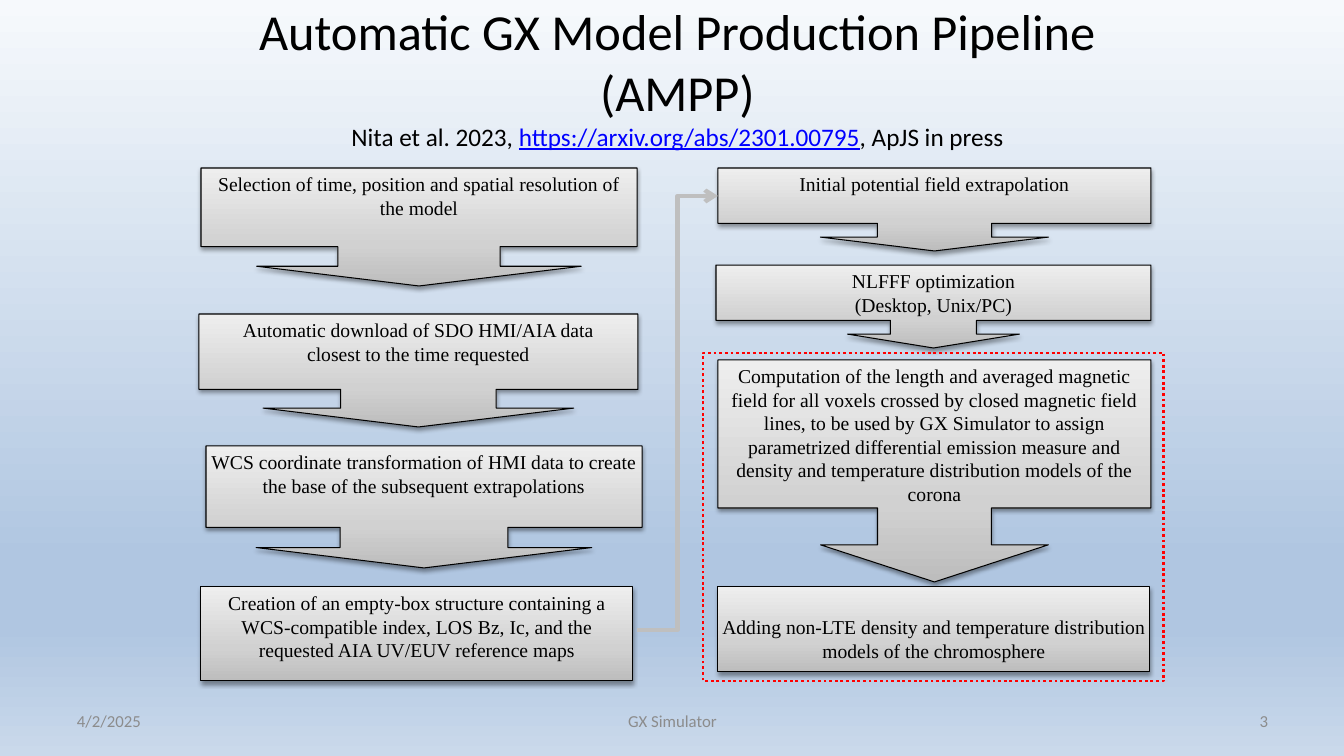
import pptx
import pptx.util
import pptx.dml.color
import pptx.enum.dml
import pptx.enum.shapes
import pptx.enum.text
import pptx.oxml.ns
from dataclasses import dataclass
from lxml import etree

qn = pptx.oxml.ns.qn
Align = pptx.enum.text.PP_ALIGN
Anchor = pptx.enum.text.MSO_ANCHOR
Shape = pptx.enum.shapes.MSO_SHAPE


@dataclass(frozen=True)
class Theme:
    heading_font: str = "Calibri"
    step_font: str = "Times New Roman"
    title_size: int = 36
    citation_size: int = 18
    step_size: int = 14
    footer_size: int = 12
    ink: str = "000000"
    link: str = "0000FF"
    muted: str = "8C8C8C"
    flow: str = "BFBFBF"
    highlight: str = "FF0000"
    sky: tuple = ((0, "F6F9FC"), (74, "B0C6E1"), (83, "B0C6E1"), (100, "CAD9EB"))
    steel: tuple = ((0, "BDBDBD"), (35, "D1D1D1"), (100, "EEEEEE"))


class PipelineSlide:
    """Draws the pipeline slide's elements in one theme, with lengths in px."""

    def __init__(self, deck, theme):
        self.theme = theme
        self.slide = deck.slides.add_slide(deck.slide_layouts[5])
        self.gradient(self.slide.background.fill, self.slide.element, theme.sky, 270)

    @staticmethod
    def px(*lengths):
        return [pptx.util.Emu(round(length * 914400 / 100.8)) for length in lengths]

    @staticmethod
    def rgb(color):
        return pptx.dml.color.RGBColor.from_string(color)

    @staticmethod
    def gradient(fill, element, stops, angle):
        fill.gradient()
        fill.gradient_angle = angle
        stop_list = element.find(".//" + qn("a:gsLst"))
        for old_stop in list(stop_list):
            stop_list.remove(old_stop)
        for position, color in stops:
            stop = etree.SubElement(stop_list, qn("a:gs"), pos=str(position * 1000))
            etree.SubElement(stop, qn("a:srgbClr"), val=color)

    def outline(self, line, color, width):
        line.color.rgb = self.rgb(color)
        line.width = pptx.util.Pt(width)

    def run(self, paragraph, text, font, size, color, underline=False):
        run = paragraph.add_run()
        run.text = text
        run.font.name = font
        run.font.size = pptx.util.Pt(size)
        run.font.color.rgb = self.rgb(color)
        run.font.underline = underline

    def title(self, box, heading, citation):
        theme = self.theme
        title = self.slide.shapes.title
        title.left, title.top, title.width, title.height = self.px(*box)
        frame = title.text_frame
        frame.auto_size = pptx.enum.text.MSO_AUTO_SIZE.NONE
        frame.vertical_anchor = Anchor.MIDDLE
        paragraph = frame.paragraphs[0]
        paragraph.alignment = Align.CENTER
        self.run(paragraph, heading, theme.heading_font, theme.title_size, theme.ink)
        paragraph.add_line_break()
        for text, is_link in citation:
            color = theme.link if is_link else theme.ink
            self.run(paragraph, text, theme.heading_font, theme.citation_size, color, is_link)

    def step(self, box, lines, arrow=None, top_inset=4):
        theme = self.theme
        kind = Shape.DOWN_ARROW_CALLOUT if arrow else Shape.RECTANGLE
        step = self.slide.shapes.add_shape(kind, *self.px(*box))
        if arrow:
            for index, value in enumerate((arrow, arrow, 0.167, 0.667)):
                step.adjustments[index] = value
        self.gradient(step.fill, step.element, theme.steel, 90)
        self.outline(step.line, theme.ink, 0.75)
        step.shadow.inherit = False
        shadow = etree.SubElement(
            step.element.spPr.find(qn("a:effectLst")), qn("a:outerShdw"),
            blurRad="40000", dist="20000", dir="5400000", rotWithShape="0")
        shade = etree.SubElement(shadow, qn("a:srgbClr"), val=theme.ink)
        etree.SubElement(shade, qn("a:alpha"), val="38000")
        frame = step.text_frame
        frame.word_wrap = True
        frame.vertical_anchor = Anchor.TOP
        frame.margin_left, frame.margin_top, frame.margin_right, frame.margin_bottom = self.px(
            4, top_inset, 4, 4)
        for index, line in enumerate(lines):
            paragraph = frame.add_paragraph() if index else frame.paragraphs[0]
            paragraph.alignment = Align.CENTER
            self.run(paragraph, line, theme.step_font, theme.step_size, theme.ink)

    def flow(self, start, end):
        flow = self.slide.shapes.add_connector(
            pptx.enum.shapes.MSO_CONNECTOR.ELBOW, *self.px(*start, *end))
        self.outline(flow.line, self.theme.flow, 3)
        etree.SubElement(flow.line._get_or_add_ln(), qn("a:tailEnd"), type="arrow")
        etree.SubElement(flow.element.spPr, qn("a:effectLst"))

    def highlight(self, box):
        border = self.slide.shapes.add_shape(Shape.RECTANGLE, *self.px(*box))
        border.fill.background()
        border.shadow.inherit = False
        self.outline(border.line, self.theme.highlight, 2)
        border.line.dash_style = pptx.enum.dml.MSO_LINE.ROUND_DOT

    def footer(self, left, width, text, alignment):
        theme = self.theme
        frame = self.slide.shapes.add_textbox(*self.px(left, 701, width, 40)).text_frame
        frame.word_wrap = True
        frame.vertical_anchor = Anchor.MIDDLE
        paragraph = frame.paragraphs[0]
        paragraph.alignment = alignment
        self.run(paragraph, text, theme.heading_font, theme.footer_size, theme.muted)


STEPS = [
    dict(box=(201, 168, 436, 118), arrow=1.375,
         lines=["Selection of time, position and spatial resolution of the model"]),
    dict(box=(199, 314, 439, 113), arrow=1.375,
         lines=["Automatic download of SDO HMI/AIA data", "closest to the time requested"]),
    dict(box=(206, 446, 436, 122), arrow=1.375,
         lines=["WCS coordinate transformation of HMI data to create "
                "the base of the subsequent extrapolations"]),
    dict(box=(201, 587, 432, 94),
         lines=["Creation of an empty-box structure containing a WCS-compatible index, "
                "LOS Bz, Ic, and the requested AIA UV/EUV reference maps"]),
    dict(box=(718, 168, 433, 83), arrow=1.375,
         lines=["Initial potential field extrapolation"]),
    dict(box=(716, 265, 435, 83), arrow=1.036,
         lines=["NLFFF optimization", "(Desktop, Unix/PC)"]),
    dict(box=(718, 360, 433, 222), arrow=0.513,
         lines=["Computation of the length and averaged magnetic field for all voxels "
                "crossed by closed magnetic field lines, to be used by GX Simulator to "
                "assign parametrized differential emission measure and density and "
                "temperature distribution models of the corona"]),
    dict(box=(718, 587, 432, 85), top_inset=28,
         lines=["Adding non-LTE density and temperature distribution models of the "
                "chromosphere"]),
]


def main():
    deck = pptx.Presentation()
    deck.slide_width, deck.slide_height = PipelineSlide.px(1344, 756)
    pipeline = PipelineSlide(deck, Theme())
    pipeline.title(
        (224, 3, 907, 146), "Automatic GX Model Production Pipeline (AMPP)",
        [("Nita et al. 2023, ", False), ("https://arxiv.org/abs/2301.00795", True),
         (", ApJS in press", False)])
    for step in STEPS:
        pipeline.step(**step)
    pipeline.flow((637, 630), (718, 196))
    pipeline.highlight((703, 353, 461, 328))
    pipeline.footer(67, 314, "4/2/2025", Align.LEFT)
    pipeline.footer(460, 425, "GX Simulator", Align.CENTER)
    pipeline.footer(964, 314, "3", Align.RIGHT)
    deck.save("out.pptx")


if __name__ == "__main__":
    main()
